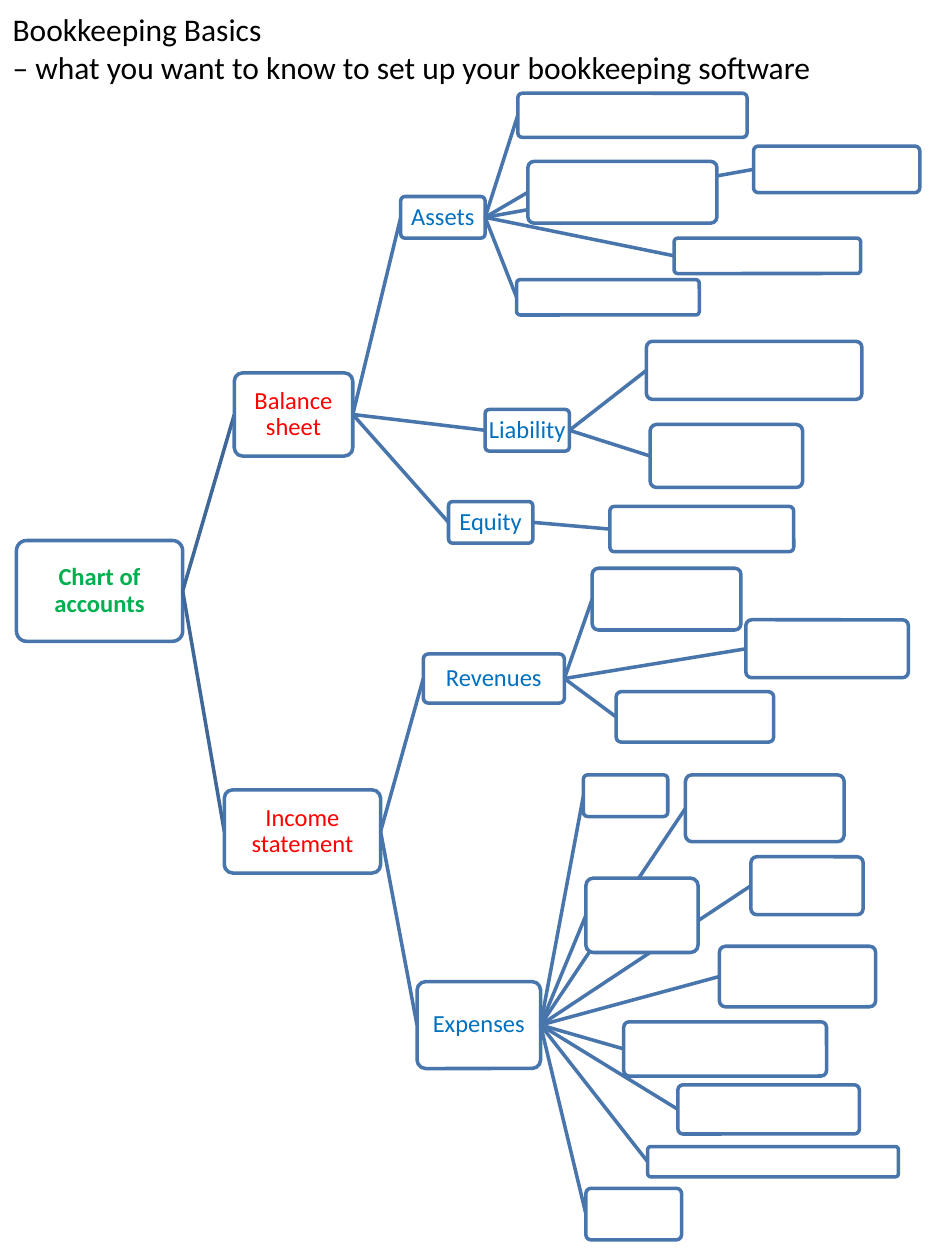
from pptx import Presentation
from pptx.dml.color import RGBColor
from pptx.enum.shapes import MSO_CONNECTOR, MSO_SHAPE
from pptx.enum.text import MSO_ANCHOR, MSO_AUTO_SIZE, PP_ALIGN
from pptx.oxml.ns import qn
from pptx.util import Pt
from lxml.etree import SubElement

FONT = "Calibri"
BLACK = RGBColor(0x00, 0x00, 0x00)
WHITE = RGBColor(0xFF, 0xFF, 0xFF)
GREEN = RGBColor(0x00, 0xB0, 0x50)
RED = RGBColor(0xFF, 0x00, 0x00)
BLUE = RGBColor(0x00, 0x70, 0xC0)
OUTLINE = RGBColor(0x48, 0x75, 0xAC)
TRUNK = RGBColor(0x3F, 0x67, 0x97)
LEVEL_COLORS = (GREEN, RED, BLUE, BLUE)  # root, statement, category, account

TITLE_LINES = (
    "Bookkeeping Basics",
    "– what you want to know to set up your bookkeeping software",
)


def node(label, left, top, width, height, *children):
    return label, (left, top, width, height), children


def blank(*box):
    return node("", *box)


# The tree: label, left, top, width, height in points, then the children
CHART_OF_ACCOUNTS = node(
    "Chart of accounts", 9.4, 308.9, 95, 57.6,
    node(
        "Balance sheet", 133.9, 213.1, 67.7, 47.5,
        node(
            "Assets", 229, 112.3, 48.2, 23.8,
            blank(295.9, 53.3, 131, 25.2),
            blank(430.6, 83.5, 95, 26.6),
            blank(301.7, 92.2, 108, 35.3),
            blank(385.2, 136.1, 106.6, 20.2),
            blank(295.2, 159.8, 104.4, 20.2),
        ),
        node(
            "Liability", 277.2, 234, 48.2, 23.8,
            blank(369.4, 195.1, 123.1, 33.1),
            blank(371.5, 242.6, 87.1, 36),
        ),
        node(
            "Equity", 256.3, 286.6, 48.2, 23.8,
            blank(348.5, 289.4, 105.1, 25.9),
        ),
    ),
    node(
        "Income statement", 128.2, 451.4, 89.3, 47.5,
        node(
            "Revenues", 241.9, 373.7, 80.6, 28.1,
            blank(338.4, 324.7, 85, 35.3),
            blank(426.2, 354.2, 92.9, 33.1),
            blank(352.1, 395.3, 90, 28.8),
        ),
        node(
            "Expenses", 238.3, 560.9, 70.6, 49.7,
            blank(429.1, 489.6, 64.1, 33.1),
            blank(333.4, 442.8, 48.2, 23.8),
            blank(391.7, 442.8, 90.7, 38.2),
            blank(334.8, 501.8, 64.1, 42.5),
            blank(356.4, 583.9, 115.9, 31),
            blank(411.1, 540.7, 89.3, 34.6),
            blank(387.4, 619.9, 103.7, 28.1),
            blank(370.1, 655.2, 143.3, 17.3),
            blank(334.8, 679, 54.7, 29.5),
        ),
    ),
)


def format_title(title):
    title.left, title.top, title.width, title.height = Pt(0), Pt(2), Pt(477), Pt(51)
    frame = title.text_frame
    frame.text = "\n".join(TITLE_LINES)
    frame.word_wrap = False
    frame.auto_size = MSO_AUTO_SIZE.NONE
    frame.vertical_anchor = MSO_ANCHOR.TOP
    for line in frame.paragraphs:
        line.alignment = PP_ALIGN.LEFT
        line.space_before = Pt(0)
        line.font.name = FONT
        line.font.size = Pt(18)
        line.font.color.rgb = BLACK


def add_box(slide, label, box, level):
    rounded = slide.shapes.add_shape(MSO_SHAPE.ROUNDED_RECTANGLE, *map(Pt, box))
    rounded.adjustments[0] = 0.1
    rounded.shadow.inherit = False
    rounded.fill.solid()
    rounded.fill.fore_color.rgb = WHITE
    rounded.line.color.rgb = OUTLINE
    rounded.line.width = Pt(2)
    if label:
        frame = rounded.text_frame
        frame.text = label
        frame.word_wrap = True
        frame.vertical_anchor = MSO_ANCHOR.MIDDLE
        frame.margin_left = frame.margin_right = Pt(0)
        frame.margin_top = frame.margin_bottom = Pt(0)
        caption = frame.paragraphs[0]
        caption.alignment = PP_ALIGN.CENTER
        caption.line_spacing = 0.9
        caption.font.name = FONT
        caption.font.size = Pt(14)
        caption.font.bold = level == 0
        caption.font.color.rgb = LEVEL_COLORS[level]
    return rounded


def add_branch(slide, color):
    branch = slide.shapes.add_connector(MSO_CONNECTOR.STRAIGHT, Pt(0), Pt(0), Pt(0), Pt(0))
    branch.line.color.rgb = color
    branch.line.width = Pt(2)
    SubElement(branch._element.spPr, qn("a:effectLst"))
    return branch


def add_tree(slide, tree, parent=None, level=0):
    label, box, children = tree
    # The branch comes first so that it lies behind its own box
    branch = add_branch(slide, TRUNK if level == 1 else OUTLINE) if parent else None
    rounded = add_box(slide, label, box, level)
    if branch:
        branch.begin_connect(parent, 3)
        branch.end_connect(rounded, 1)
    for child in children:
        add_tree(slide, child, rounded, level + 1)


def main():
    presentation = Presentation()
    presentation.slide_width, presentation.slide_height = Pt(540), Pt(720)
    slide = presentation.slides.add_slide(presentation.slide_layouts[5])
    format_title(slide.shapes.title)
    add_tree(slide, CHART_OF_ACCOUNTS)
    presentation.save("out.pptx")


if __name__ == "__main__":
    main()
